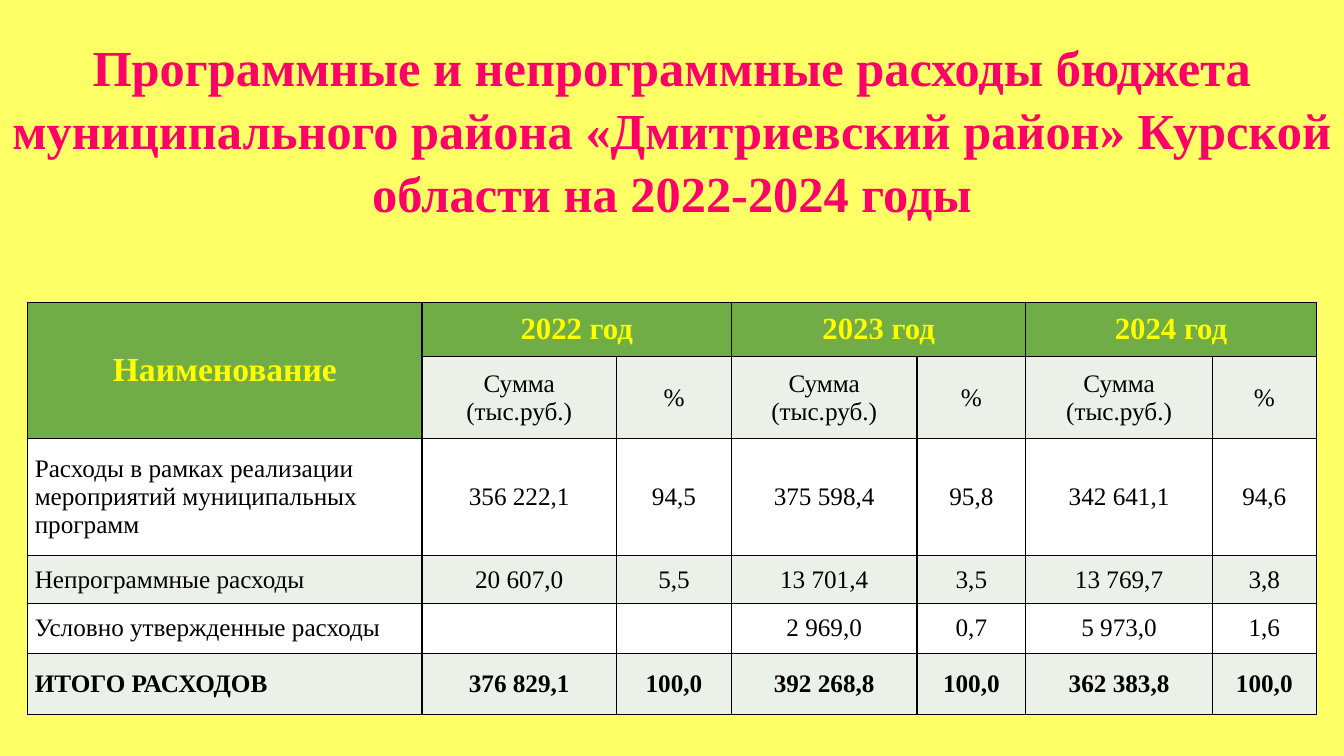
import pptx
import pptx.util
import pptx.dml.color
import pptx.enum.text
import pptx.oxml
import pptx.oxml.ns
from dataclasses import dataclass


@dataclass(frozen=True)
class Theme:
    font: str = "Times New Roman"
    page: str = "FFFF66"
    title: str = "FF0066"
    head: str = "70AD47"
    label: str = "FFFF00"
    band: str = "EBF1E9"
    plain: str = "FFFFFF"
    ink: str = "000000"
    big: int = 36
    name: int = 24
    year: int = 22
    body: int = 18


LOOK = Theme()
WIDE, HIGH = 13.33, 7.5
COLS = [3.91, 1.93, 1.14, 1.84, 1.08, 1.85, 1.03]
ROWS = [0.54, 0.81, 1.16, 0.48, 0.49, 0.61]
YEARS = ["2022 год", "2023 год", "2024 год"]
HEADS = ["Сумма (тыс.руб.)", "%"]
TITLE = ("Программные и непрограммные расходы бюджета муниципального района "
         "«Дмитриевский район» Курской области на 2022-2024 годы")
COSTS = [
    ["Расходы в рамках реализации мероприятий муниципальных программ",
     "356 222,1", "94,5", "375 598,4", "95,8", "342 641,1", "94,6"],
    ["Непрограммные расходы",
     "20 607,0", "5,5", "13 701,4", "3,5", "13 769,7", "3,8"],
    ["Условно утвержденные расходы",
     "", "", "2 969,0", "0,7", "5 973,0", "1,6"],
    ["ИТОГО РАСХОДОВ",
     "376 829,1", "100,0", "392 268,8", "100,0", "362 383,8", "100,0"],
]


def inch(num):
    return pptx.util.Inches(num)


def tint(code):
    return pptx.dml.color.RGBColor.from_string(code)


def line_xml(tag, width):
    """Make a solid ink line for a cell edge or a text outline."""
    return pptx.oxml.parse_xml(
        f'<a:{tag} {pptx.oxml.ns.nsdecls("a")} w="{pptx.util.Pt(width)}">'
        f'<a:solidFill><a:srgbClr val="{LOOK.ink}"/></a:solidFill></a:{tag}>')


def write(frame, text, size=LOOK.body, color=LOOK.ink, bold=False,
          align="CENTER", space=None, edge=None):
    """Put formatted text into a text frame."""
    frame.word_wrap = True
    para = frame.paragraphs[0]
    para.alignment = getattr(pptx.enum.text.PP_ALIGN, align)
    para.line_spacing = space
    para.font.size = pptx.util.Pt(size)
    if not text:
        return
    run = para.add_run()
    run.text = text
    run.font.name = LOOK.font
    run.font.size = pptx.util.Pt(size)
    run.font.bold = bold
    run.font.color.rgb = tint(color)
    if edge:
        run.font.fill.solid()
        run.font.color.rgb = tint(color)
        run.font._element.insert(0, line_xml("ln", edge))


def add_title(slide):
    box = slide.shapes.add_textbox(0, 0, inch(WIDE), inch(2.54))
    frame = box.text_frame
    frame.vertical_anchor = pptx.enum.text.MSO_ANCHOR.MIDDLE
    write(frame, TITLE, size=LOOK.big, color=LOOK.title, bold=True,
          space=1.04, edge=0.75)


def paint(cell, fill):
    """Set the fill, the anchor and all four edges of a cell."""
    cell.vertical_anchor = pptx.enum.text.MSO_ANCHOR.MIDDLE
    props = cell._tc.get_or_add_tcPr()
    for side in ("lnL", "lnR", "lnT", "lnB"):
        props.append(line_xml(side, 1))
    cell.fill.solid()
    cell.fill.fore_color.rgb = tint(fill)


def fill_heads(grid):
    grid.cell(0, 0).merge(grid.cell(1, 0))
    write(grid.cell(0, 0).text_frame, "Наименование", size=LOOK.name,
          color=LOOK.label, bold=True)
    for num, year in enumerate(YEARS):
        col = 1 + num * len(HEADS)
        grid.cell(0, col).merge(grid.cell(0, col + 1))
        write(grid.cell(0, col).text_frame, year, size=LOOK.year,
              color=LOOK.label, bold=True)
        for step, head in enumerate(HEADS):
            write(grid.cell(1, col + step).text_frame, head)


def fill_costs(grid):
    for row, cost in enumerate(COSTS, start=2):
        for col, text in enumerate(cost):
            cell = grid.cell(row, col)
            cell.margin_left = cell.margin_right = inch(0.07)
            cell.margin_top = cell.margin_bottom = 0
            write(cell.text_frame, text, bold=row == len(ROWS) - 1,
                  align="CENTER" if col else "LEFT")


def add_costs(slide):
    left = (WIDE - sum(COLS)) / 2
    grid = slide.shapes.add_table(
        len(ROWS), len(COLS), inch(left), inch(HIGH * 0.4),
        inch(sum(COLS)), inch(sum(ROWS))).table
    for col, width in zip(grid.columns, COLS):
        col.width = inch(width)
    for row, height in zip(grid.rows, ROWS):
        row.height = inch(height)
    # Green heads, then alternating bands
    for row in range(len(ROWS)):
        for col in range(len(COLS)):
            band = LOOK.band if row % 2 else LOOK.plain
            top = row == 0 or (row == 1 and col == 0)
            paint(grid.cell(row, col), LOOK.head if top else band)
    fill_heads(grid)
    fill_costs(grid)


def main():
    deck = pptx.Presentation()
    deck.slide_width, deck.slide_height = inch(WIDE), inch(HIGH)
    slide = deck.slides.add_slide(deck.slide_layouts[6])
    # Page colour
    back = slide.background.fill
    back.solid()
    back.fore_color.rgb = tint(LOOK.page)
    # Title and table
    add_title(slide)
    add_costs(slide)
    deck.save("out.pptx")


if __name__ == "__main__":
    main()
